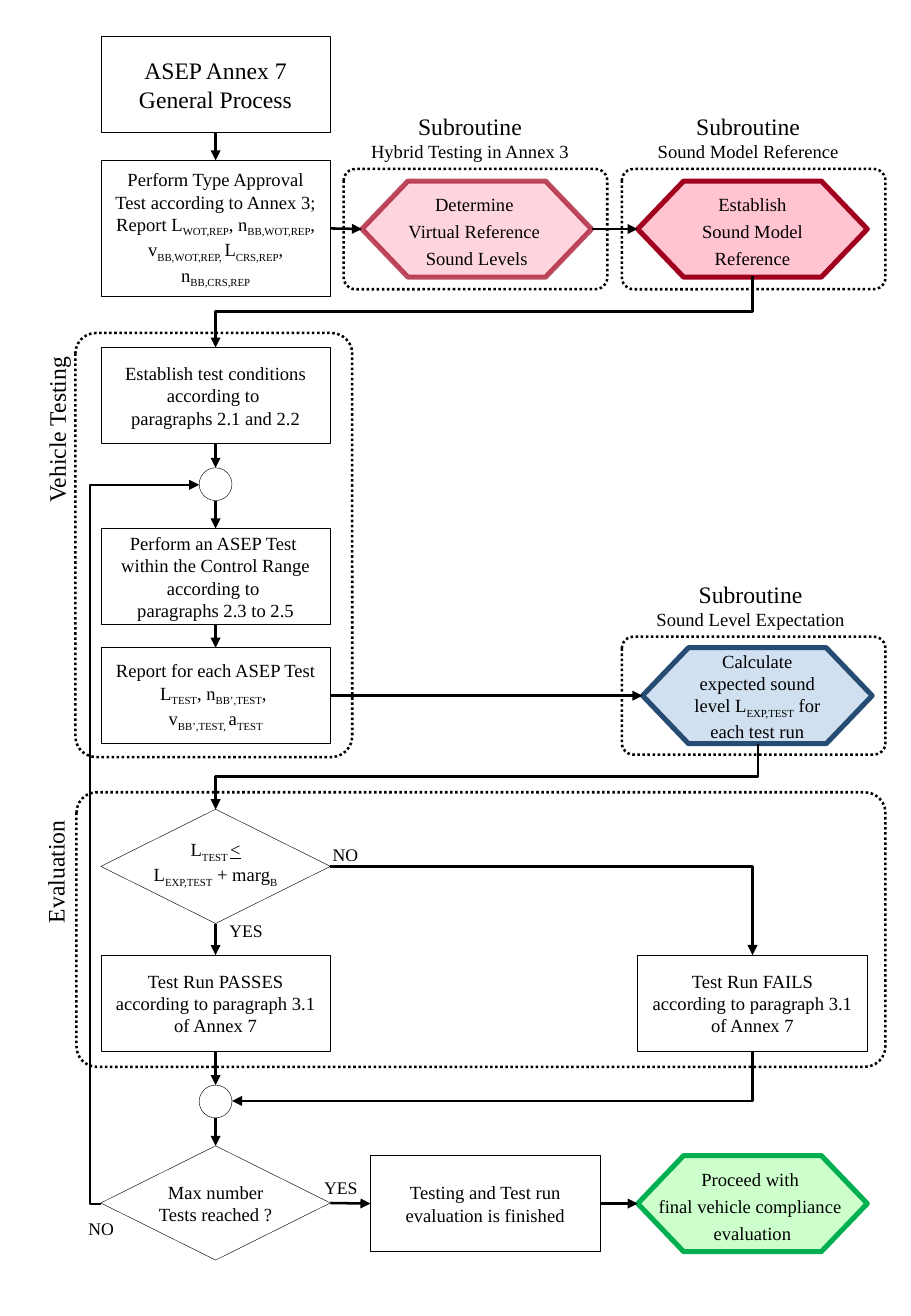
from dataclasses import dataclass

from lxml.etree import SubElement
from pptx import Presentation
from pptx.dml.color import RGBColor
from pptx.enum.dml import MSO_LINE
from pptx.enum.shapes import MSO_CONNECTOR as LINK, MSO_SHAPE as SHAPE
from pptx.enum.text import MSO_ANCHOR, MSO_AUTO_SIZE, PP_ALIGN
from pptx.oxml.ns import qn
from pptx.util import Inches, Pt

TOP, LEFT, BOTTOM, RIGHT = range(4)
BOX_W, BOX_H = 1.89, 0.79
DIAMOND_H, CIRCLE = 0.94, 0.27
MAIN_X, FAR_X = 0.83, 5.25
MAIN_MID, FAR_MID = MAIN_X + BOX_W / 2, FAR_X + BOX_W / 2
INSETS = (0.1, 0.05, 0.1, 0.05)


@dataclass(frozen=True)
class Theme:
    font: str = "Times New Roman"
    heading: float = 14
    body: float = 11
    label: float = 10.5
    hexagon_leading: float = 16
    hairline: float = 0.25
    rule: float = 1.5
    thick: float = 3
    ink: str = "000000"
    paper: str = "FFFFFF"
    red: tuple = ("FFC4CF", "A0001D")
    blue: tuple = ("D1E0F0", "264C73")
    green: tuple = ("CCFFCC", "00B050")


class FlowChart:
    def __init__(self, slide, theme):
        self.slide, self.theme = slide, theme

    def paint(self, shape, fill, line, width):
        if fill:
            shape.fill.solid()
            shape.fill.fore_color.rgb = RGBColor.from_string(fill)
        else:
            shape.fill.background()
        shape.line.color.rgb = RGBColor.from_string(line)
        shape.line.width = Pt(width)
        shape.shadow.inherit = False

    def set_text(self, shape, paragraphs, sizes, insets=INSETS, wrap=True,
                 align=PP_ALIGN.CENTER, leading=None):
        """Each paragraph lists its runs; every second run is a subscript."""
        frame = shape.text_frame
        frame.word_wrap = wrap
        frame.auto_size = MSO_AUTO_SIZE.NONE
        frame.vertical_anchor = MSO_ANCHOR.MIDDLE
        (frame.margin_left, frame.margin_top,
         frame.margin_right, frame.margin_bottom) = map(Inches, insets)
        for index, runs in enumerate(paragraphs):
            paragraph = frame.add_paragraph() if index else frame.paragraphs[0]
            paragraph.alignment = align
            if leading:
                paragraph.line_spacing = Pt(leading)
            for position, text in enumerate(runs):
                for number, part in enumerate(text.split("\n")):
                    if number:
                        paragraph.add_line_break()
                    run = paragraph.add_run()
                    run.text = part
                    run.font.name = self.theme.font
                    run.font.size = Pt(sizes[min(index, len(sizes) - 1)])
                    run.font.color.rgb = RGBColor.from_string(self.theme.ink)
                    if position % 2:
                        run._r.get_or_add_rPr().set("baseline", "-25000")

    def title(self, x, y, w, h, paragraphs):
        title = self.slide.shapes.title
        title.left, title.top, title.width, title.height = map(Inches, (x, y, w, h))
        self.paint(title, self.theme.paper, self.theme.ink, self.theme.hairline)
        self.set_text(title, paragraphs, [self.theme.heading])
        return title

    def node(self, kind, x, y, w, h, paragraphs=(), filled=True, **text):
        node = self.slide.shapes.add_shape(kind, *map(Inches, (x, y, w, h)))
        self.paint(node, self.theme.paper if filled else None,
                   self.theme.ink, self.theme.hairline)
        self.set_text(node, paragraphs, [self.theme.body], **text)
        return node

    def process(self, x, y, paragraphs, h=BOX_H):
        return self.node(SHAPE.FLOWCHART_PROCESS, x, y, BOX_W, h, paragraphs)

    def hexagon(self, x, y, paragraphs, colors, opacity=None, **text):
        hexagon = self.node(SHAPE.FLOWCHART_PREPARATION, x, y, BOX_W, BOX_H, paragraphs, **text)
        self.paint(hexagon, *colors, self.theme.thick)
        if opacity:
            for color in hexagon._element.spPr.iter(qn("a:srgbClr")):
                SubElement(color, qn("a:alpha")).set("val", str(opacity * 1000))
        return hexagon

    def merge(self, y):
        return self.node(SHAPE.OVAL, 1.64, y, CIRCLE, CIRCLE)

    def frame(self, x, y, w, h, rounding):
        frame = self.slide.shapes.add_shape(SHAPE.ROUNDED_RECTANGLE, *map(Inches, (x, y, w, h)))
        frame.adjustments[0] = rounding
        self.paint(frame, None, self.theme.ink, self.theme.rule)
        frame.line.dash_style = MSO_LINE.ROUND_DOT

    def caption(self, x, y, w, h, paragraphs, sizes, align=PP_ALIGN.LEFT, rotation=0):
        caption = self.slide.shapes.add_textbox(*map(Inches, (x, y, w, h)))
        caption.rotation = rotation
        self.set_text(caption, paragraphs, sizes, wrap=False, align=align)

    def finish_arrow(self, arrow):
        arrow.line.color.rgb = RGBColor.from_string(self.theme.ink)
        arrow.line.width = Pt(self.theme.rule)
        SubElement(arrow.line._get_or_add_ln(), qn("a:tailEnd")).set("type", "triangle")
        SubElement(arrow._element.spPr, qn("a:effectLst"))

    def arrow(self, source, source_side, target, target_side):
        arrow = self.slide.shapes.add_connector(LINK.STRAIGHT, 0, 0, 0, 0)
        if not source.is_placeholder and source.auto_shape_type == SHAPE.OVAL:
            arrow.begin_x = source.left + source.width // 2
            arrow.begin_y = source.top + source.height
        else:
            arrow.begin_connect(source, source_side)
        arrow.end_connect(target, target_side)
        self.finish_arrow(arrow)

    def elbow(self, start, end, turned=False, corner=False, bend=None):
        """A turned elbow leaves downwards; a corner has a single bend."""
        (x1, y1), (x2, y2) = start, end
        if turned:
            mid_x, mid_y = (x1 + x2) / 2, (y1 + y2) / 2
            half_w, half_h = abs(y2 - y1) / 2, abs(x2 - x1) / 2
            x1, y1, x2, y2 = mid_x - half_w, mid_y - half_h, mid_x + half_w, mid_y + half_h
        elbow = self.slide.shapes.add_connector(LINK.ELBOW, *map(Inches, (x1, y1, x2, y2)))
        properties = elbow._element.spPr
        geometry = properties.find(qn("a:prstGeom"))
        if turned:
            properties.find(qn("a:xfrm")).set("rot", "5400000")
        if corner:
            geometry.set("prst", "bentConnector2")
        if bend is not None:
            guide = SubElement(geometry.find(qn("a:avLst")), qn("a:gd"))
            guide.set("name", "adj1")
            guide.set("fmla", f"val {round(bend * 100000)}")
        self.finish_arrow(elbow)


def main():
    deck = Presentation()
    deck.slide_width, deck.slide_height = Inches(7.5), Inches(10.83)
    theme = Theme()
    chart = FlowChart(deck.slides.add_slide(deck.slide_layouts[5]), theme)

    # Phase and subroutine frames with their captions
    for x, y, w, h in [(0.62, 2.74, 2.28, 3.49), (0.63, 6.52, 6.66, 2.26)]:
        chart.frame(x, y, w, h, 0.075)
    for name, x, y, w in [("Vehicle Testing", -0.24, 3.36, 1.41), ("Evaluation", -0.07, 7, 1.05)]:
        chart.caption(x, y, w, 0.34, [[name]], [theme.heading], rotation=270)
    for name, x, y, h, caption_x, caption_w in [
            ("Hybrid Testing in Annex 3", 2.83, 1.39, 0.99, 2.94, 1.86),
            ("Sound Model Reference", 5.12, 1.39, 0.99, 5.31, 1.7),
            ("Sound Level Expectation", 5.12, 5.24, 0.97, 5.3, 1.76)]:
        chart.frame(x, y, 2.17, h, 0.098)
        chart.caption(caption_x, y - 0.52, caption_w, 0.52, [["Subroutine"], [name]],
                      [theme.heading, theme.body], PP_ALIGN.CENTER)

    # Main column
    general = chart.title(MAIN_X, 0.3, BOX_W, BOX_H, [["ASEP Annex 7"], ["General Process"]])
    approval = chart.process(MAIN_X, 1.32, [[
        "Perform Type Approval Test according to Annex 3; Report L", "WOT,REP", ", n",
        "BB,WOT,REP", ", v", "BB,WOT,REP, ", "L", "CRS,REP", ", n", "BB,CRS,REP"]], h=1.12)
    conditions = chart.process(MAIN_X, 2.86, [
        ["Establish test conditions according to \nparagraphs 2.1 and 2.2"]])
    loop_entry = chart.merge(3.85)
    test = chart.process(MAIN_X, 4.35, [[
        "Perform an ASEP Test \nwithin the Control Range according to \nparagraphs 2.3 to 2.5"]])
    report = chart.process(MAIN_X, 5.33, [
        ["Report for each ASEP Test L", "TEST", ", n", "BB’,TEST", ", "],
        ["v", "BB’,TEST, ", "a", "TEST"]])
    limit = chart.node(SHAPE.FLOWCHART_DECISION, MAIN_X, 6.66, BOX_W, DIAMOND_H, [
        ["L", "TEST ", "<"], ["L", "EXP,TEST", " + marg", "B"]],
        insets=(0, 0, 0, 0.05), wrap=False)
    limit.text_frame.paragraphs[0].runs[2].font.underline = True
    passes = chart.process(MAIN_X, 7.86, [["Test Run PASSES according to paragraph 3.1 of Annex 7"]])
    result = chart.merge(8.93)
    enough = chart.node(SHAPE.FLOWCHART_DECISION, MAIN_X, 9.43, BOX_W, DIAMOND_H,
                        [["Max number Tests reached ?"]], filled=False, insets=(0, 0.05, 0, 0.05))

    # Side steps
    chart.process(FAR_X, 7.86, [["Test Run FAILS"], ["according to paragraph 3.1 of Annex 7"]])
    finished = chart.process(3.05, 9.51, [["Testing and Test run evaluation is finished"]])
    levels = chart.hexagon(2.98, 1.49, [["Determine "], ["Virtual Reference "], ["Sound Levels"]],
                           theme.red, opacity=70, wrap=False, leading=theme.hexagon_leading)
    model = chart.hexagon(FAR_X, 1.49, [["Establish Sound Model Reference"]],
                          theme.red, leading=theme.hexagon_leading)
    expected = chart.hexagon(5.29, 5.33, [[
        "Calculate expected sound level L", "EXP,TEST", " for each test run"]],
        theme.blue, insets=(0, 0, 0, 0))
    proceed = chart.hexagon(FAR_X, 9.51, [
        ["Proceed with "], ["final vehicle compliance "], ["evaluation"]], theme.green,
        insets=(0, 0.05, 0, 0.05), wrap=False, leading=theme.hexagon_leading)

    # Straight arrows
    for upper, lower in [(general, approval), (conditions, loop_entry), (loop_entry, test),
                         (test, report), (limit, passes), (passes, result), (result, enough)]:
        chart.arrow(upper, BOTTOM, lower, TOP)
    for before, after in [(approval, levels), (levels, model), (report, expected),
                          (enough, finished), (finished, proceed)]:
        chart.arrow(before, RIGHT, after, LEFT)

    # Bent arrows
    chart.elbow((FAR_MID, 2.27), (MAIN_MID, 2.86), turned=True)
    chart.elbow((6.24, 6.12), (MAIN_MID, 6.66), turned=True)
    chart.elbow((2.72, 7.13), (FAR_MID, 7.86), corner=True)
    chart.elbow((FAR_MID, 8.65), (1.91, 9.06), turned=True, corner=True)
    chart.elbow((MAIN_X, 9.91), (1.64, 3.99), bend=-0.11)

    # Branch labels
    for answer, x, y, w in [("NO", 2.64, 6.89, 0.42), ("YES", 1.79, 7.52, 0.48),
                            ("NO", 0.63, 9.97, 0.42), ("YES", 2.57, 9.63, 0.48)]:
        chart.caption(x, y, w, 0.28, [[answer]], [theme.label])

    deck.save("out.pptx")


if __name__ == "__main__":
    main()
